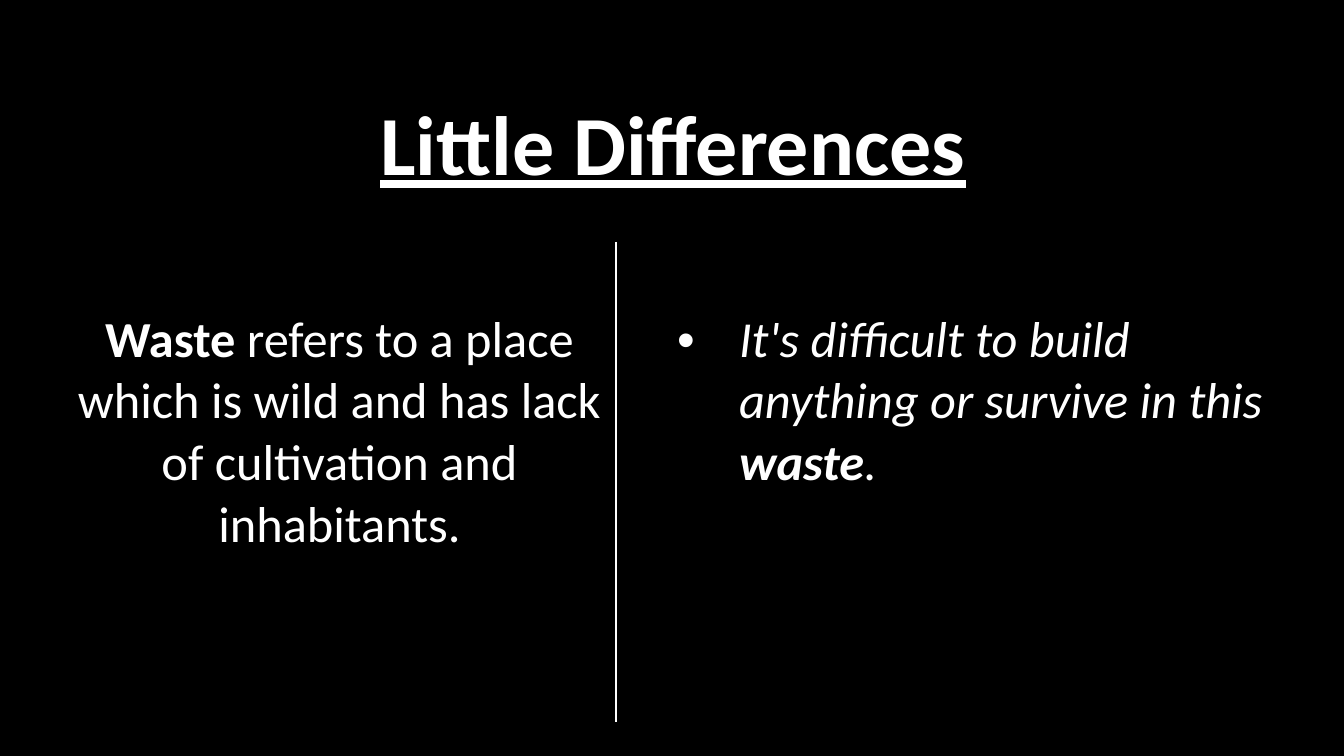
"""Build the Little Differences slide: a heading above two divided columns."""
import lxml.etree
import pptx
import pptx.dml.color
import pptx.enum.text
import pptx.oxml
import pptx.oxml.ns
import pptx.util

BLACK = pptx.dml.color.RGBColor(0x00, 0x00, 0x00)
WHITE = pptx.dml.color.RGBColor(0xFF, 0xFF, 0xFF)
FONT = "Calibri"
NO_GRID_STYLE = "{2D5ABB26-0587-4C30-8999-92F81FD0307C}"

HEADING = [("Little Differences", {"bold": True, "underline": True})]
DEFINITION = [
    ("Waste", {"bold": True}),
    (" refers to a place which is wild and has lack of cultivation and inhabitants.", {}),
]
EXAMPLE = [
    ("It's difficult to build anything or survive in this ", {"italic": True}),
    ("waste", {"italic": True, "bold": True}),
    (".", {"italic": True}),
]

SLIDE_SIZE = (1344, 756)
TABLE_ORIGIN = (63, 29)
COLUMN_WIDTHS = (553, 667)
ROW_HEIGHTS = (213, 480)
TEXT_TOP = 67
BULLET_MARGIN, BULLET_INDENT = 113, -62


def px(length):
    """Convert px to EMU."""
    return pptx.util.Emu(round(length * 12192000 / SLIDE_SIZE[0]))


def write_cell(cell, runs, size, alignment):
    """Fill a cell with one paragraph of formatted runs."""
    cell.fill.background()
    cell.margin_top = px(TEXT_TOP)
    paragraph = cell.text_frame.paragraphs[0]
    paragraph.alignment = alignment
    for text, styles in runs:
        run = paragraph.add_run()
        run.text = text
        run.font.name = FONT
        run.font.size = pptx.util.Pt(size)
        run.font.color.rgb = WHITE
        for name, value in styles.items():
            setattr(run.font, name, value)
    return paragraph


def add_border(cell, side):
    """Draw a thin white line on one side of a cell."""
    border = pptx.oxml.parse_xml(
        f'<a:{side} {pptx.oxml.ns.nsdecls("a")} w="{pptx.util.Pt(1)}">'
        f'<a:solidFill><a:srgbClr val="{WHITE}"/></a:solidFill></a:{side}>'
    )
    cell._tc.get_or_add_tcPr().insert(0, border)


def add_bullet(paragraph):
    """Give a paragraph a round bullet with a hanging indent."""
    properties = paragraph._p.get_or_add_pPr()
    properties.set("marL", str(px(BULLET_MARGIN)))
    properties.set("indent", str(px(BULLET_INDENT)))
    font = lxml.etree.SubElement(properties, pptx.oxml.ns.qn("a:buFont"))
    font.set("typeface", "Arial")
    bullet = lxml.etree.SubElement(properties, pptx.oxml.ns.qn("a:buChar"))
    bullet.set("char", "•")


def main():
    """Create and save the presentation."""
    presentation = pptx.Presentation()
    presentation.slide_width, presentation.slide_height = map(px, SLIDE_SIZE)
    slide = presentation.slides.add_slide(presentation.slide_layouts[6])
    slide.background.fill.solid()
    slide.background.fill.fore_color.rgb = BLACK

    sizes = (*TABLE_ORIGIN, sum(COLUMN_WIDTHS), sum(ROW_HEIGHTS))
    frame = slide.shapes.add_table(
        len(ROW_HEIGHTS), len(COLUMN_WIDTHS), *map(px, sizes)
    )
    table = frame.table
    table.first_row = table.horz_banding = False
    for style in frame._element.iter(pptx.oxml.ns.qn("a:tableStyleId")):
        style.text = NO_GRID_STYLE
    for column, width in zip(table.columns, COLUMN_WIDTHS):
        column.width = px(width)
    for row, height in zip(table.rows, ROW_HEIGHTS):
        row.height = px(height)

    heading, definition, example = table.cell(0, 0), table.cell(1, 0), table.cell(1, 1)
    heading.merge(table.cell(0, 1))
    align = pptx.enum.text.PP_ALIGN
    write_cell(heading, HEADING, 60, align.CENTER)
    write_cell(definition, DEFINITION, 36, align.CENTER)
    add_bullet(write_cell(example, EXAMPLE, 36, align.LEFT))
    add_border(definition, "lnR")
    add_border(example, "lnL")

    presentation.save("out.pptx")


if __name__ == "__main__":
    main()
